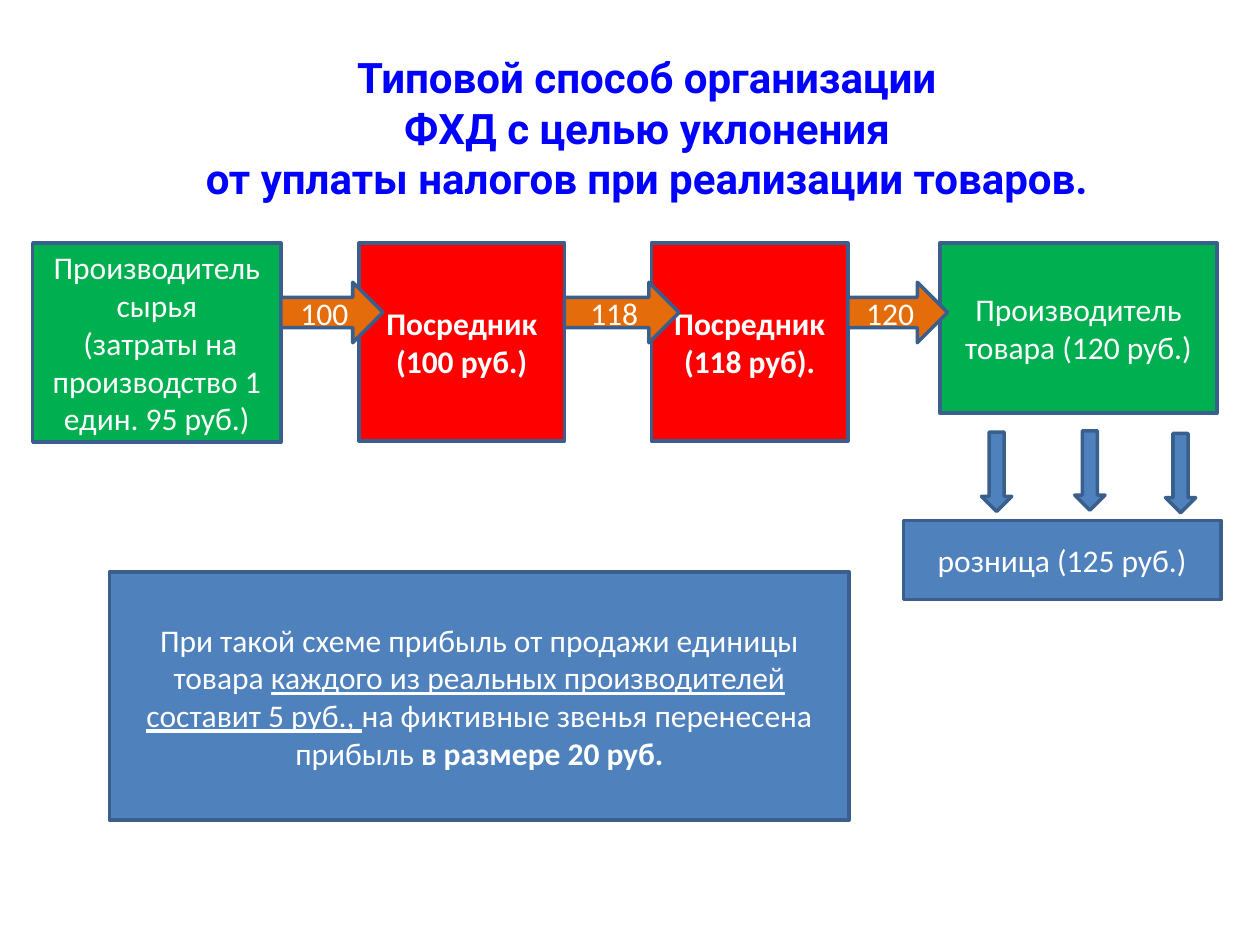
from pptx import Presentation
from pptx.dml.color import RGBColor
from pptx.enum.shapes import MSO_SHAPE as Shape
from pptx.enum.text import MSO_ANCHOR as Anchor, MSO_AUTO_SIZE as AutoSize, PP_ALIGN as Align
from pptx.util import Inches, Pt

THEME = {
    "title": {"name": "Roboto", "size": Pt(24), "bold": True, "color": "0000FF"},
    "body": {"name": "Calibri", "size": Pt(18), "bold": False, "color": "FFFFFF"},
    "real": "00B050", "fictitious": "FF0000", "flow": "E46C0A",
    "neutral": "4F81BD", "outline": "3A5F8C", "outline_width": Pt(2),
}
BOLD, UNDERLINE = {"bold": True}, {"underline": True}

# Text is a list of paragraphs; a paragraph is a list of (words, format changes).
TITLE = [[(line, {})] for line in (
    "Типовой способ организации",
    "ФХД с целью уклонения",
    "от уплаты налогов при реализации товаров.",
)]
TITLE_BOX = (0.45, 0.36, 9.37, 1.31)

# Supply chain: left, width, height, role, text, price label and length of the outgoing arrow
CHAIN = [
    (0.26, 1.97, 1.58, "real",
     [[("Производитель сырья", {})],
      [(" (затраты на производство 1 един. 95 руб.)", {})]], "100", 0.81),
    (2.85, 1.63, 1.57, "fictitious", [[("Посредник (100 руб.)", BOLD)]], "118", 0.91),
    (5.17, 1.56, 1.57, "fictitious", [[("Посредник (118 руб).", BOLD)]], "120", 0.79),
    (7.46, 2.2, 1.35, "real", [[("Производитель товара (120 руб.)", {})]], None, None),
]
CHAIN_TOP, FLOW_TOP, FLOW_HEIGHT = 1.93, 2.24, 0.48

RETAIL = [[("розница (125 руб.)", {})]]
RETAIL_BOX = (7.17, 4.13, 2.52, 0.63)
RETAIL_ARROWS = [(7.79, 3.43), (8.53, 3.42), (9.25, 3.44)]
RETAIL_ARROW_SIZE = (0.24, 0.63)

CONCLUSION = [[
    ("При такой схеме прибыль от продажи единицы товара ", {}),
    ("каждого из реальных производителей составит 5 руб., ", UNDERLINE),
    ("на фиктивные звенья перенесена прибыль ", {}),
    ("в размере 20 руб.", BOLD),
]]
CONCLUSION_BOX = (0.87, 4.54, 5.87, 1.97)


def write(frame, paragraphs, style, anchor):
    frame.word_wrap = True
    frame.vertical_anchor = anchor
    for index, runs in enumerate(paragraphs):
        paragraph = frame.paragraphs[0] if index == 0 else frame.add_paragraph()
        paragraph.alignment = Align.CENTER
        for words, changes in runs:
            run = paragraph.add_run()
            run.text = words
            for key, value in {**THEME[style], **changes}.items():
                if key == "color":
                    run.font.color.rgb = RGBColor.from_string(value)
                else:
                    setattr(run.font, key, value)


def add_block(slide, kind, box, fill, paragraphs=()):
    block = slide.shapes.add_shape(kind, *map(Inches, box))
    block.shadow.inherit = False
    block.fill.solid()
    block.fill.fore_color.rgb = RGBColor.from_string(THEME[fill])
    block.line.color.rgb = RGBColor.from_string(THEME["outline"])
    block.line.width = THEME["outline_width"]
    write(block.text_frame, paragraphs, "body", Anchor.MIDDLE)


def add_title(slide):
    title = slide.shapes.title
    title.left, title.top, title.width, title.height = map(Inches, TITLE_BOX)
    write(title.text_frame, TITLE, "title", Anchor.TOP)
    title.text_frame.auto_size = AutoSize.SHAPE_TO_FIT_TEXT


def add_chain(slide):
    for left, width, height, role, text, _, _ in CHAIN:
        add_block(slide, Shape.RECTANGLE, (left, CHAIN_TOP, width, height), role, text)
    for left, width, _, _, _, price, length in CHAIN[:-1]:
        add_block(slide, Shape.RIGHT_ARROW, (left + width, FLOW_TOP, length, FLOW_HEIGHT),
                  "flow", [[(price, {})]])


def main():
    deck = Presentation()
    deck.slide_width, deck.slide_height = Inches(10), Inches(7.5)
    slide = deck.slides.add_slide(deck.slide_layouts[5])
    add_title(slide)
    add_block(slide, Shape.RECTANGLE, CONCLUSION_BOX, "neutral", CONCLUSION)
    add_chain(slide)
    add_block(slide, Shape.RECTANGLE, RETAIL_BOX, "neutral", RETAIL)
    for corner in RETAIL_ARROWS:
        add_block(slide, Shape.DOWN_ARROW, corner + RETAIL_ARROW_SIZE, "neutral")
    deck.save("out.pptx")


if __name__ == "__main__":
    main()
